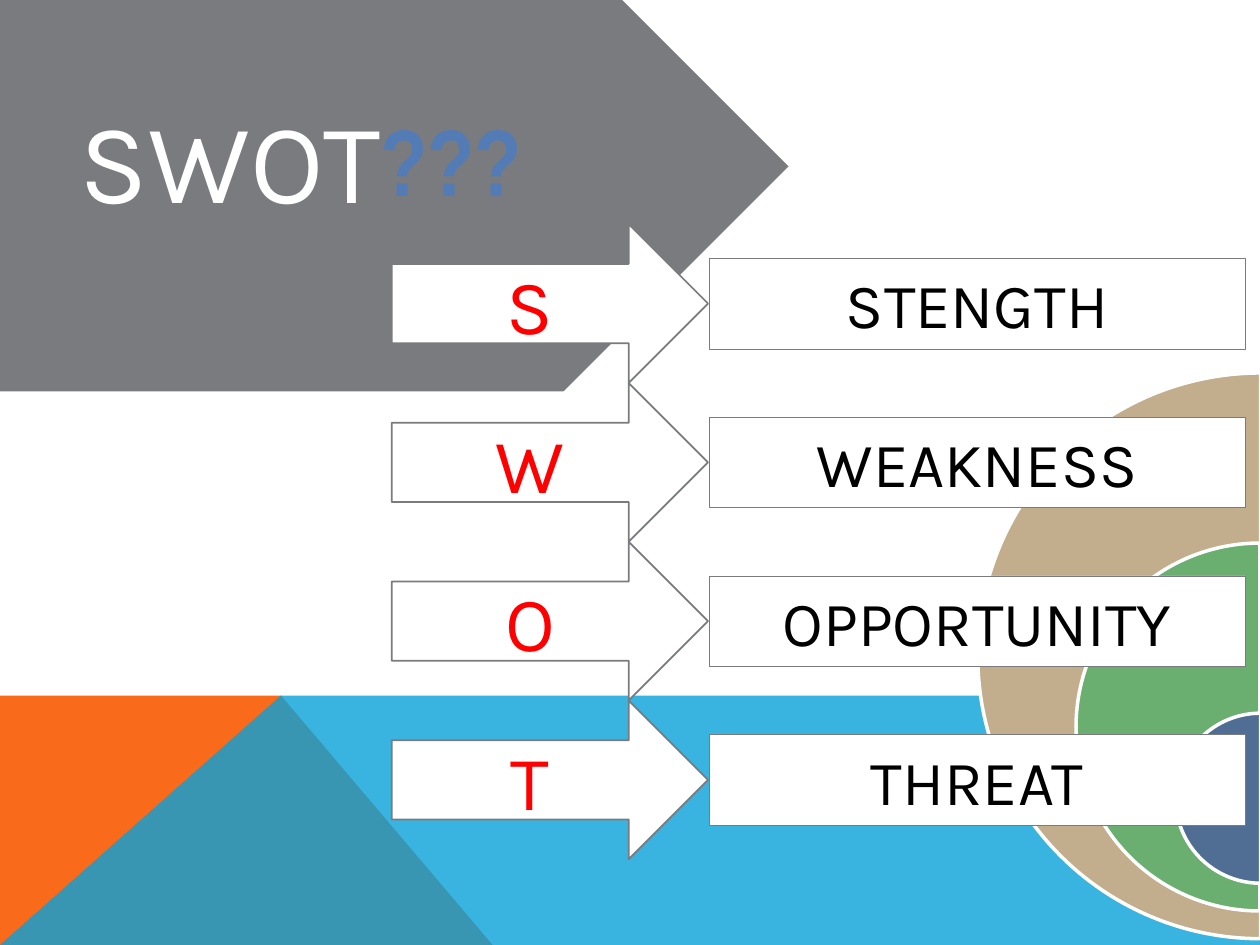
from dataclasses import dataclass

from lxml import etree
from pptx import Presentation
from pptx.dml.color import RGBColor
from pptx.enum.shapes import MSO_SHAPE
from pptx.enum.text import MSO_ANCHOR, PP_ALIGN
from pptx.oxml.ns import qn
from pptx.util import Pt

PIE, CHEVRON = MSO_SHAPE.PIE, MSO_SHAPE.CHEVRON
ARROW, RECTANGLE = MSO_SHAPE.RIGHT_ARROW, MSO_SHAPE.RECTANGLE
MIDDLE, TOP, CENTER = MSO_ANCHOR.MIDDLE, MSO_ANCHOR.TOP, PP_ALIGN.CENTER
SCALE = 9144  # EMU in one px, 100 px to the inch
BLANK_LAYOUT = 6


@dataclass(frozen=True)
class Theme:
    white: str = "FFFFFF"
    gray: str = "797B7E"
    orange: str = "F96A1B"
    blue: str = "08A1D9"
    tan: str = "C2AD8D"
    green: str = "6AAF70"
    navy: str = "506E94"
    marks: str = "537BB6"
    letter: str = "FF0000"
    label: str = "000000"
    font: str = "Karla"
    marks_font: str = "Arial Narrow"
    title_size: int = 65
    marks_size: int = 54
    letter_size: int = 44
    label_size: int = 36


@dataclass(frozen=True)
class Box:
    left: int
    top: int
    width: int
    height: int

    def emu(self) -> list[int]:
        return [n * SCALE for n in (self.left, self.top, self.width, self.height)]


@dataclass(frozen=True)
class TextStyle:
    size: int
    color: str
    font: str
    bold: bool = False


@dataclass(frozen=True)
class Ring:
    box: Box
    color: str


@dataclass(frozen=True)
class Row:
    letter: str
    label: str


THEME = Theme()
TITLE = TextStyle(THEME.title_size, THEME.white, THEME.font)
MARKS = TextStyle(THEME.marks_size, THEME.marks, THEME.marks_font, True)
LETTER = TextStyle(THEME.letter_size, THEME.letter, THEME.font)
LABEL = TextStyle(THEME.label_size, THEME.label, THEME.font)

RINGS = [
    Ring(Box(776, 296, 449, 449), THEME.tan),
    Ring(Box(854, 431, 292, 292), THEME.green),
    Ring(Box(933, 566, 135, 135), THEME.navy),
]
ROWS = [
    Row("S", "STENGTH"),
    Row("W", "WEAKNESS"),
    Row("O", "OPPORTUNITY"),
    Row("T", "THREAT"),
]
ROW_TOP, ROW_PITCH, LABEL_HEIGHT = 178, 126, 72


def set_text(shape, text: str, style: TextStyle, anchor=MIDDLE) -> None:
    frame = shape.text_frame
    frame.text = text
    frame.word_wrap = True
    frame.vertical_anchor = anchor
    para = frame.paragraphs[0]
    para.alignment = CENTER
    font = para.runs[0].font
    font.name, font.size, font.bold = style.font, Pt(style.size), style.bold
    font.color.rgb = RGBColor.from_string(style.color)


def paint(shape, fill: str, line: str = "", width: float = 0) -> None:
    shape.shadow.inherit = False
    shape.fill.solid()
    shape.fill.fore_color.rgb = RGBColor.from_string(fill)
    if line:
        shape.line.color.rgb = RGBColor.from_string(line)
        shape.line.width = Pt(width)
    else:
        shape.line.fill.background()


def add_preset(slide, kind, box: Box, fill: str, line: str, width: float):
    shape = slide.shapes.add_shape(kind, *box.emu())
    paint(shape, fill, line, width)
    return shape


def add_polygon(slide, points: list[tuple[int, int]], fill: str):
    builder = slide.shapes.build_freeform(*points[0], scale=SCALE)
    builder.add_line_segments(points[1:], close=True)
    shape = builder.convert_to_shape()
    paint(shape, fill)
    return shape


def set_opacity(shape, percent: int) -> None:
    color = shape.fill._xPr.find(qn("a:solidFill"))[0]
    etree.SubElement(color, qn("a:alpha")).set("val", str(percent * 1000))


def add_text(slide, box: Box, text: str, style: TextStyle, anchor):
    shape = slide.shapes.add_textbox(*box.emu())
    set_text(shape, text, style, anchor)
    return shape


def add_row(slide, row: Row, top: int) -> None:
    arrow_box = Box(311, top, 251, ROW_PITCH)
    arrow = add_preset(slide, ARROW, arrow_box, THEME.white, THEME.gray, 1)
    set_text(arrow, row.letter, LETTER)
    label_top = top + (ROW_PITCH - LABEL_HEIGHT) // 2
    label_box = Box(563, label_top, 425, LABEL_HEIGHT)
    label = add_preset(slide, RECTANGLE, label_box, THEME.white, THEME.gray, 0.25)
    set_text(label, row.label, LABEL)


def main() -> None:
    deck = Presentation()
    deck.slide_width, deck.slide_height = 1000 * SCALE, 750 * SCALE
    slide = deck.slides.add_slide(deck.slide_layouts[BLANK_LAYOUT])

    # Footer triangles
    add_polygon(slide, [(0, 750), (0, 552), (223, 552), (391, 750)], THEME.orange)
    band = add_polygon(
        slide, [(0, 750), (223, 552), (1000, 552), (1000, 750)], THEME.blue
    )
    set_opacity(band, 80)

    # Half rings on the right edge
    for ring in RINGS:
        pie = add_preset(slide, PIE, ring.box, ring.color, THEME.white, 2)
        pie.adjustments[0], pie.adjustments[1] = 54, 162

    # Title on its chevron
    add_preset(slide, CHEVRON, Box(-272, -48, 900, 360), THEME.gray, THEME.white, 2)
    title = add_text(slide, Box(-92, -48, 540, 360), "SWOT", TITLE, MIDDLE)
    title.text_frame.margin_right = 0
    title.text_frame.paragraphs[0].line_spacing = 0.9
    add_text(slide, Box(287, 76, 142, 101), "???", MARKS, TOP)

    # One arrow and label per SWOT letter
    for index, row in enumerate(ROWS):
        add_row(slide, row, ROW_TOP + index * ROW_PITCH)

    deck.save("out.pptx")


if __name__ == "__main__":
    main()
